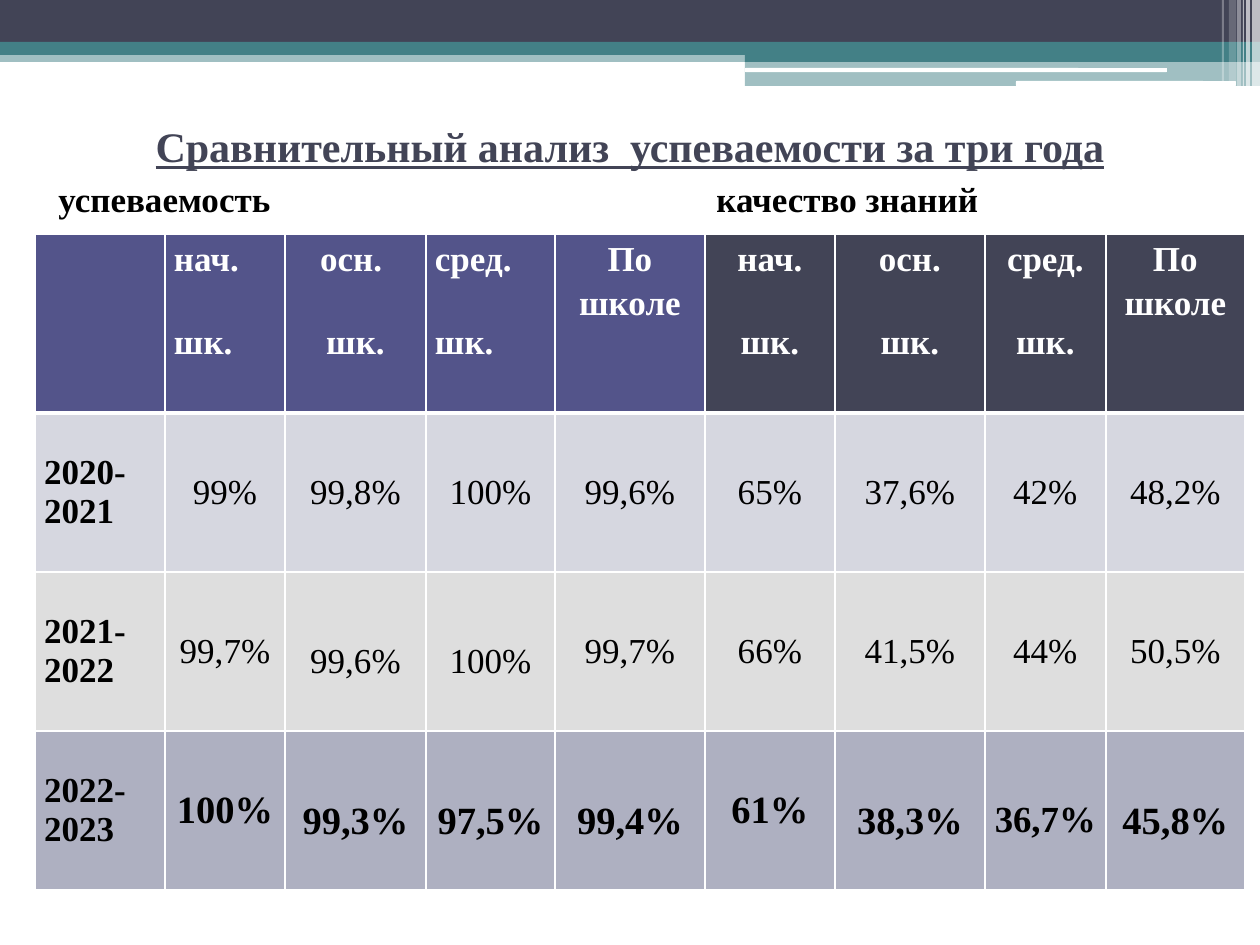
from lxml.etree import SubElement
from pptx import Presentation
from pptx.dml.color import RGBColor
from pptx.enum.shapes import MSO_SHAPE as Shape
from pptx.enum.text import MSO_ANCHOR as Anchor, MSO_AUTO_SIZE as AutoSize, PP_ALIGN as Align
from pptx.oxml.ns import qn
from pptx.util import Pt

EMU_PER_PX = 914400 / 126
COLORS = {
    "white": "FFFFFF", "black": "000000", "slate": "424456", "teal": "438086",
    "violet": "53548A", "row_2020": "D6D7E0", "row_2021": "DEDEDE", "row_2022": "AEB0C1",
}
HEADING = {"line_spacing": 1.15, "space_before": Pt(12), "space_after": Pt(10)}
LOOSE = {"line_spacing": 1.5, "space_before": Pt(12)}

# Banner parts: left, top, width, height, colour, opacity in percent
BANDS = [
    (0, 50, 1260, 12, "teal", 50),
    (0, 0, 1260, 42, "slate", 100),
    (0, 42, 1260, 13, "teal", 100),
    (745, 49, 515, 13, "teal", 100),
    (745, 61, 515, 25, "teal", 50),
]
RULES = [(745, 68, 422, 4, "white", 100), (1016, 81, 220, 5, "white", 100)]
# Banner stripes: left, width, height, opacity in percent
STRIPES = [
    (1252, 8, 86, 65), (1246, 4, 86, 65), (1243, 1, 86, 60),
    (1237, 4, 86, 40), (1229, 7, 81, 20), (1222, 2, 81, 30),
]

COLUMN_WIDTHS = [130, 120, 141, 129, 150, 130, 150, 121, 139]
ROW_HEIGHTS = [179, 159, 159, 159]
HEADERS = ["", "нач.\nшк.", "осн. \nшк.", "сред.\nшк.", "По школе",
           "нач.\nшк.", "осн.\nшк.", "сред.\nшк.", "По школе"]
LEFT_HEADERS = {1, 3}
FIRST_QUALITY_COLUMN = 5
# Year rows: fill, value size, bold values, columns with loose spacing, texts
YEARS = [
    ("row_2020", 20, False, set(),
     ["2020-2021", "99%", "99,8%", "100%", "99,6%", "65%", "37,6%", "42%", "48,2%"]),
    ("row_2021", 20, False, {2, 3},
     ["2021-2022", "99,7%", "99,6%", "100%", "99,7%", "66%", "41,5%", "44%", "50,5%"]),
    ("row_2022", 22, True, {2, 3, 4, 6, 7, 8},
     ["2022-2023", "100%", "99,3%", "97,5%", "99,4%", "61%", "38,3%", "36,7%", "45,8%"]),
]


def px(*lengths):
    return [round(length * EMU_PER_PX) for length in lengths]


def rgb(name):
    return RGBColor.from_string(COLORS[name])


class SlideBuilder:
    font_name = "Times New Roman"

    def __init__(self, slide):
        self.slide = slide

    def add_text(self, frame, text, size, color, align=Align.CENTER, spacing=None, **font_values):
        values = {"name": self.font_name, "size": Pt(size), "bold": True, **font_values}
        for index, line in enumerate(text.split("\n")):
            paragraph = frame.add_paragraph() if index else frame.paragraphs[0]
            for key, value in {"alignment": align, **(spacing or {})}.items():
                setattr(paragraph, key, value)
            run = paragraph.add_run()
            run.text = line
            for key, value in values.items():
                setattr(run.font, key, value)
            run.font.color.rgb = rgb(color)

    def band(self, left, top, width, height, color, opacity, kind=Shape.RECTANGLE):
        shape = self.slide.shapes.add_shape(kind, *px(left, top, width, height))
        shape.shadow.inherit = False
        shape.line.fill.background()
        shape.fill.solid()
        shape.fill.fore_color.rgb = rgb(color)
        if opacity < 100:
            fill_color = shape.element.find(".//" + qn("a:srgbClr"))
            SubElement(fill_color, qn("a:alpha"), val=str(opacity * 1000))

    def title(self, text, left, top, width, height):
        title = self.slide.shapes.title
        title.left, title.top, title.width, title.height = px(left, top, width, height)
        title.text_frame.vertical_anchor = Anchor.MIDDLE
        self.add_text(title.text_frame, text, 24, "slate", underline=True)

    def tabbed_text(self, text, left, top, width, height, tab):
        frame = self.slide.shapes.add_textbox(*px(left, top, width, height)).text_frame
        frame.word_wrap = True
        frame.auto_size = AutoSize.SHAPE_TO_FIT_TEXT
        self.add_text(frame, text, 20, "black", Align.LEFT, HEADING)
        properties = frame.paragraphs[0]._p.get_or_add_pPr()
        tabs = SubElement(properties, qn("a:tabLst"))
        SubElement(tabs, qn("a:tab"), pos=str(px(tab)[0]), algn="l")

    def table(self, left, top, column_widths, row_heights):
        frame = self.slide.shapes.add_table(
            len(row_heights), len(column_widths),
            *px(left, top, sum(column_widths), sum(row_heights)))
        table = frame.table
        table.horz_banding = False
        for column, width in zip(table.columns, px(*column_widths)):
            column.width = width
        for row, height in zip(table.rows, px(*row_heights)):
            row.height = height
        return table

    def cell(self, cell, text, fill, size, color, anchor, top_border=1, bottom_border=1, **style):
        cell.margin_left, cell.margin_right, cell.margin_top, cell.margin_bottom = px(9, 9, 0, 0)
        cell.vertical_anchor = anchor
        borders = {"a:lnL": 1, "a:lnR": 1, "a:lnT": top_border, "a:lnB": bottom_border}
        properties = cell._tc.get_or_add_tcPr()
        for tag, points in borders.items():
            line = SubElement(properties, qn(tag), w=str(Pt(points)))
            SubElement(SubElement(line, qn("a:solidFill")), qn("a:srgbClr"), val=COLORS["white"])
        cell.fill.solid()
        cell.fill.fore_color.rgb = rgb(fill)
        if text:
            self.add_text(cell.text_frame, text, size, color, **style)


def main():
    presentation = Presentation()
    presentation.slide_width, presentation.slide_height = px(1260, 945)
    builder = SlideBuilder(presentation.slides.add_slide(presentation.slide_layouts[5]))

    # Banner
    for band in BANDS:
        builder.band(*band)
    for rule in RULES:
        builder.band(*rule, kind=Shape.ROUNDED_RECTANGLE)
    for left, width, height, opacity in STRIPES:
        builder.band(left, 0, width, height, "white", opacity)

    # Title
    builder.title("Сравнительный анализ  успеваемости за три года", 63, 96, 1134, 100)

    # Table header
    table = builder.table(35, 234, COLUMN_WIDTHS, ROW_HEIGHTS)
    for column, text in enumerate(HEADERS):
        fill = "violet" if column < FIRST_QUALITY_COLUMN else "slate"
        align = Align.LEFT if column in LEFT_HEADERS else Align.CENTER
        builder.cell(table.cell(0, column), text, fill, 20, "white", Anchor.TOP,
                     bottom_border=3, align=align, spacing=HEADING)

    # Table years
    for row, (fill, value_size, bold, loose_columns, texts) in enumerate(YEARS, 1):
        for column, text in enumerate(texts):
            is_year = column == 0
            size = 20 if is_year else value_size
            if text == "36,7%":
                size = 21
            builder.cell(table.cell(row, column), text, fill, size, "black", Anchor.MIDDLE,
                         top_border=3 if row == 1 else 1, bold=is_year or bold,
                         align=Align.LEFT if is_year else Align.CENTER,
                         spacing=LOOSE if column in loose_columns else None)

    # Captions of the two halves
    builder.tabbed_text("успеваемость\tкачество знаний", 46, 165, 1151, 58, tab=658)

    presentation.save("out.pptx")


if __name__ == "__main__":
    main()
